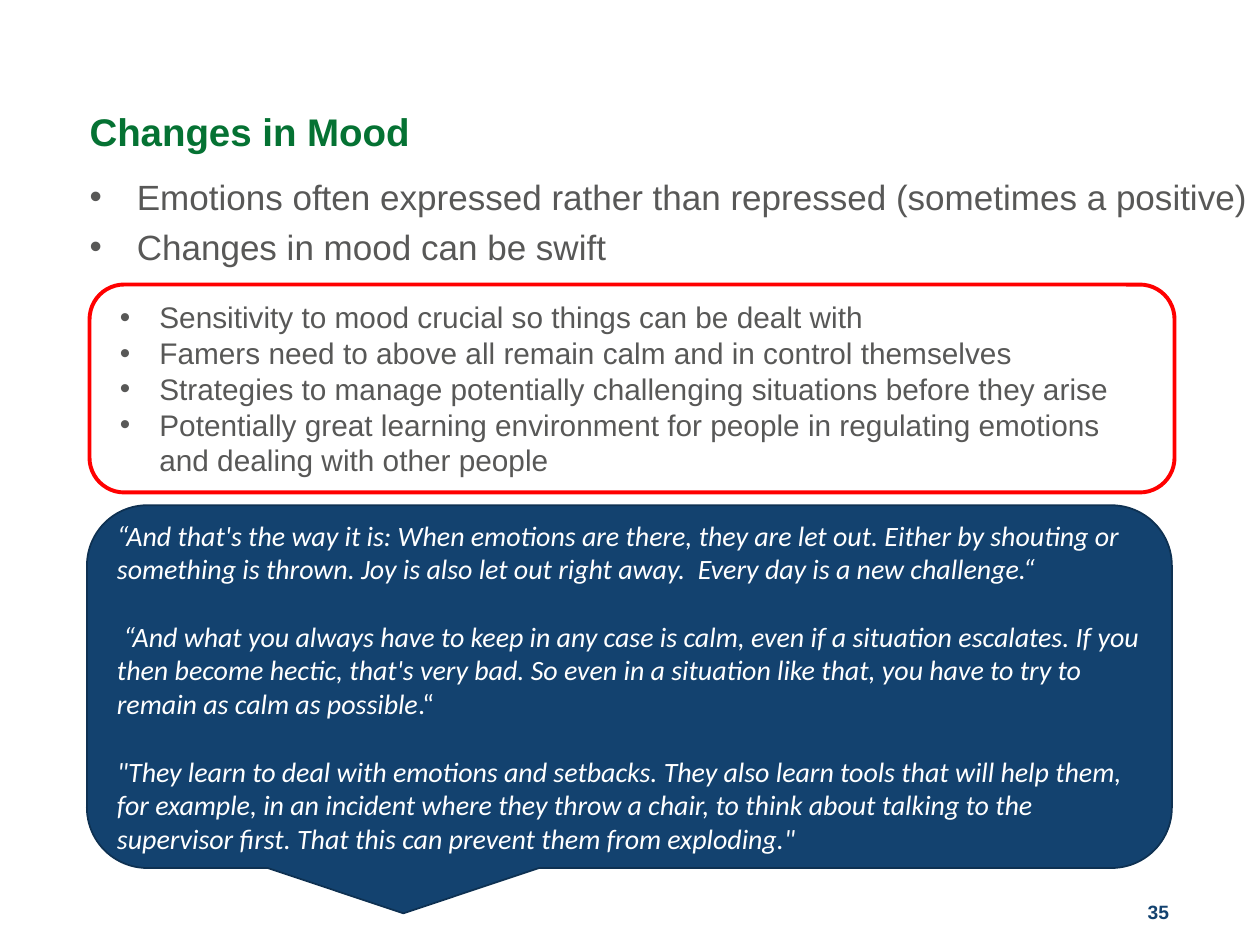
from lxml import etree
from pptx import Presentation
from pptx.dml.color import RGBColor
from pptx.enum import shapes, text
from pptx.oxml.ns import qn
from pptx.util import Pt

GREEN = RGBColor(0x05, 0x72, 0x33)
GREY = RGBColor(0x58, 0x58, 0x57)
NAVY = RGBColor(0x13, 0x42, 0x6F)
DARK_NAVY = RGBColor(0x0E, 0x31, 0x52)
RED = RGBColor(0xFF, 0, 0)
WHITE = RGBColor(0xFF, 0xFF, 0xFF)

# Content: each paragraph is a list of (text, italic) runs
TITLE = [[("Changes in Mood", False)]]
POINTS = [
    [("Emotions often expressed rather than repressed (sometimes a positive)", False)],
    [("Changes in mood can be swift", False)],
]
ADVICE = [
    [("Sensitivity to mood crucial so things can be dealt with", False)],
    [("Famers need to above all remain calm and in control themselves", False)],
    [("Strategies to manage potentially challenging situations before they arise", False)],
    [("Potentially great learning environment for people in regulating emotions "
      "and dealing with other people", False)],
]
QUOTES = [
    [("“And that's the way it is: When emotions are there, they are let out. Either by "
      "shouting or something is thrown. Joy is also let out right away.  Every day is a "
      "new challenge.“", True)],
    [(" “And what you always have to keep in any case is calm, even if a situation "
      "escalates. If you then become hectic, that's very bad. So even in a situation like "
      "that, you have to try to remain as calm as possible", True), (".“", False)],
    [("\"They learn to deal with emotions and setbacks. They also learn tools that will "
      "help them, for example, in an incident where they throw a chair, to think about "
      "talking to the supervisor first. That this can prevent them from exploding.\"", True)],
]
PAGE_NUMBER = [[("35", False)]]


def add_bullet(para, margin, hanging):
    props = para._p.get_or_add_pPr()
    props.set("marL", str(Pt(margin)))
    props.set("indent", str(-Pt(hanging)))
    etree.SubElement(props, qn("a:buFont")).set("typeface", "Arial")
    etree.SubElement(props, qn("a:buChar")).set("char", "•")


def write(shape, paragraphs, size, color, font="Arial", bold=False, line=None, gap=0,
          bullet=None, insets=(7.2, 3.6, 7.2, 3.6), align=text.PP_ALIGN.LEFT,
          anchor=text.MSO_ANCHOR.TOP):
    frame = shape.text_frame
    frame.word_wrap = True
    frame.vertical_anchor = anchor
    (frame.margin_left, frame.margin_top,
     frame.margin_right, frame.margin_bottom) = map(Pt, insets)
    for index, runs in enumerate(paragraphs):
        para = frame.add_paragraph() if index else frame.paragraphs[0]
        if bullet:
            add_bullet(para, *bullet)
        para.alignment = align
        if line:
            para.line_spacing = Pt(line)
        if index and gap:
            para.space_before = Pt(gap)
        for words, italic in runs:
            span = para.add_run()
            span.text = words
            span.font.name, span.font.size = font, Pt(size)
            span.font.bold, span.font.italic = bold, italic
            span.font.color.rgb = color


def add_box(page, *place):
    return page.shapes.add_textbox(*map(Pt, place))


def add_panel(page, kind, place, fill, outline, width):
    panel = page.shapes.add_shape(kind, *map(Pt, place))
    panel.shadow.inherit = False
    panel.fill.solid()
    panel.fill.fore_color.rgb = fill
    panel.line.color.rgb = outline
    panel.line.width = Pt(width)
    return panel


def main():
    deck = Presentation()
    deck.slide_width, deck.slide_height = Pt(720), Pt(540)
    page = deck.slides.add_slide(deck.slide_layouts[6])
    middle = text.MSO_ANCHOR.MIDDLE
    kinds = shapes.MSO_SHAPE

    # Heading and main points
    write(add_box(page, 51.2, 59.8, 304, 34.5), TITLE, 22, GREEN, bold=True, line=25,
          insets=(0, 3.6, 7.2, 3.6))
    write(add_box(page, 51.2, 94.3, 679, 290), POINTS, 20, GREY, line=24, gap=5,
          bullet=(27, 27), insets=(0, 5.75, 7.2, 3.6))

    # Page number
    write(add_box(page, 557.3, 496, 162, 43.3), PAGE_NUMBER, 11, NAVY, bold=True,
          line=13.3, insets=(0, 3.6, 51.2, 11.5), align=text.PP_ALIGN.RIGHT,
          anchor=text.MSO_ANCHOR.BOTTOM)

    # Advice panel
    advice = add_panel(page, kinds.ROUNDED_RECTANGLE, (51.2, 162.6, 620, 118.8),
                       WHITE, RED, 2.25)
    write(advice, ADVICE, 17, GREY, bullet=(27, 22.5), anchor=middle)

    # Quotes, one line apart
    quotes = add_panel(page, kinds.ROUNDED_RECTANGULAR_CALLOUT, (49.7, 288.7, 620, 207.3),
                       NAVY, DARK_NAVY, 1)
    write(quotes, QUOTES, 16, WHITE, font="Calibri", gap=19.5, anchor=middle)

    deck.save("out.pptx")


if __name__ == "__main__":
    main()
